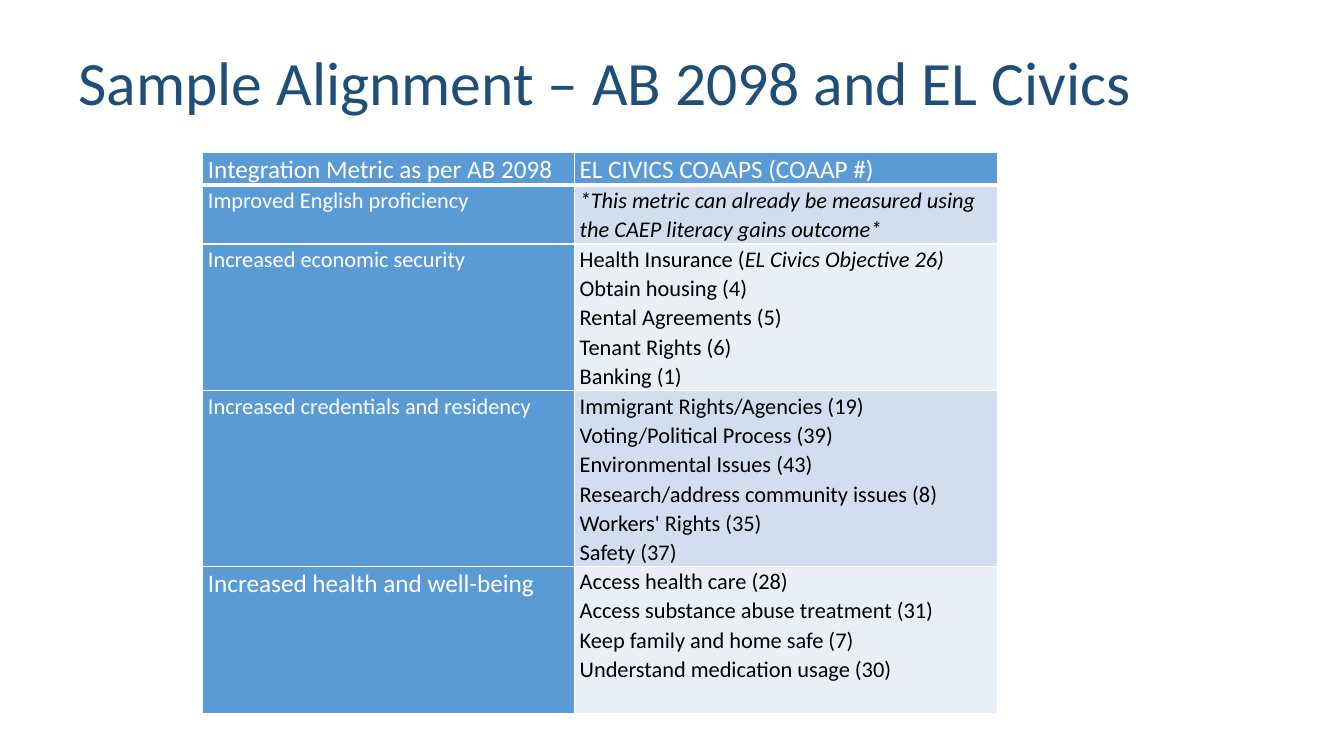
"""Build the slide that aligns AB 2098 metrics with EL Civics COAAPs."""
from dataclasses import dataclass

from lxml.etree import SubElement
from pptx import Presentation
from pptx.dml.color import RGBColor
from pptx.enum.text import MSO_ANCHOR
from pptx.oxml.ns import qn
from pptx.util import Cm, Pt

WHITE, BLACK, NAVY, BLUE = "FFFFFF", "000000", "1F4E79", "5B9BD5"
BANDS = ("D2DEEF", "EAEFF7")
COLUMN_WIDTHS = (9.37, 10.67)


@dataclass
class Run:
    text: str
    italic: bool = False


@dataclass
class Metric:
    name: str
    coaaps: list[list[Run]]
    height: float
    name_size: int = 16


def lines(*texts: str) -> list[list[Run]]:
    return [[Run(text)] for text in texts]


METRICS = [
    Metric("Improved English proficiency",
           [[Run("*This metric can already be measured using the CAEP literacy "
                 "gains outcome*", italic=True)]], 1.48),
    Metric("Increased economic security",
           [[Run("Health Insurance ("), Run("EL Civics Objective 26)", italic=True)],
            *lines("Obtain housing (4)", "Rental Agreements (5)",
                   "Tenant Rights (6)", "Banking (1)")], 3.7),
    Metric("Increased credentials and residency",
           lines("Immigrant Rights/Agencies (19)", "Voting/Political Process (39)",
                 "Environmental Issues (43)", "Research/address community issues (8)",
                 "Workers' Rights (35)", "Safety (37)"), 4.42),
    Metric("Increased health and well-being",
           lines("Access health care (28)", "Access substance abuse treatment (31)",
                 "Keep family and home safe (7)", "Understand medication usage (30)"),
           3.7, name_size=18),
]


def rgb(color: str) -> RGBColor:
    return RGBColor.from_string(color)


def write(tf, paragraphs: list[list[Run]], *, size: int, color: str,
          spacing: float = 1.07) -> None:
    for i, runs in enumerate(paragraphs):
        p = tf.add_paragraph() if i else tf.paragraphs[0]
        p.line_spacing = spacing
        for run in runs:
            r = p.add_run()
            r.text = run.text
            r.font.name = "Calibri"
            r.font.size = Pt(size)
            r.font.bold = False
            r.font.italic = run.italic
            r.font.color.rgb = rgb(color)


def add_borders(cell, bottom: float) -> None:
    tc_pr = cell._tc.get_or_add_tcPr()
    for side, width in (("L", 1), ("R", 1), ("T", 1), ("B", bottom)):
        line = SubElement(tc_pr, qn(f"a:ln{side}"), w=str(Pt(width)))
        fill = SubElement(line, qn("a:solidFill"))
        SubElement(fill, qn("a:srgbClr"), val=WHITE)


def fill_cell(cell, paragraphs: list[list[Run]], *, size: int, color: str,
              fill: str, bottom: float = 1) -> None:
    cell.margin_left = cell.margin_right = Cm(0.13)
    cell.margin_top = cell.margin_bottom = 0
    add_borders(cell, bottom)
    cell.fill.solid()
    cell.fill.fore_color.rgb = rgb(fill)
    write(cell.text_frame, paragraphs, size=size, color=color)


def add_title(s, text: str) -> None:
    tf = s.shapes.add_textbox(Cm(1.73), Cm(0.38), Cm(29.21), Cm(3.56)).text_frame
    tf.word_wrap = True
    tf.vertical_anchor = MSO_ANCHOR.MIDDLE
    write(tf, lines(text), size=44, color=NAVY, spacing=0.9)


def add_metrics_table(s, headings: tuple[str, str], metrics: list[Metric]) -> None:
    heights = [0.83, *(metric.height for metric in metrics)]
    table = s.shapes.add_table(len(heights), len(COLUMN_WIDTHS), Cm(5.11), Cm(3.84),
                               Cm(sum(COLUMN_WIDTHS)), Cm(sum(heights))).table
    table.first_row = table.horz_banding = False
    for column, width in zip(table.columns, COLUMN_WIDTHS):
        column.width = Cm(width)
    for row, height in zip(table.rows, heights):
        row.height = Cm(height)
    for i, heading in enumerate(headings):
        fill_cell(table.cell(0, i), lines(heading), size=18, color=WHITE,
                  fill=BLUE, bottom=3)
    for i, metric in enumerate(metrics):
        fill_cell(table.cell(i + 1, 0), lines(metric.name), size=metric.name_size,
                  color=WHITE, fill=BLUE)
        fill_cell(table.cell(i + 1, 1), metric.coaaps, size=16, color=BLACK,
                  fill=BANDS[i % 2])


def main() -> None:
    prs = Presentation()
    prs.slide_width, prs.slide_height = Cm(33.87), Cm(19.05)
    s = prs.slides.add_slide(prs.slide_layouts[6])
    add_title(s, "Sample Alignment – AB 2098 and EL Civics")
    add_metrics_table(s, ("Integration Metric as per AB 2098",
                          "EL CIVICS COAAPS (COAAP #)"), METRICS)
    prs.save("out.pptx")


if __name__ == "__main__":
    main()
